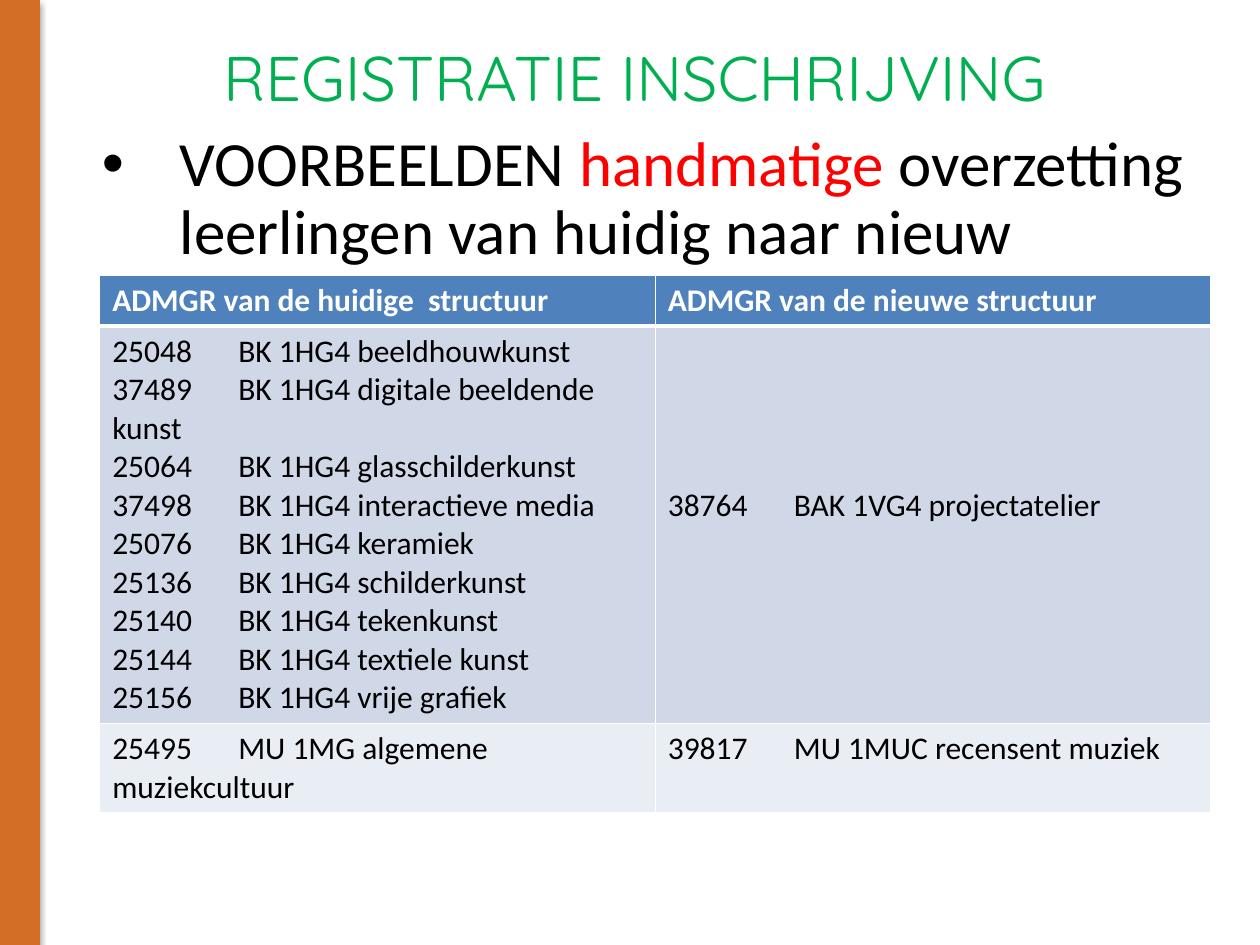
from dataclasses import dataclass

from lxml import etree
from pptx import Presentation
from pptx.dml.color import RGBColor
from pptx.enum.shapes import MSO_SHAPE
from pptx.enum.text import MSO_ANCHOR, MSO_AUTO_SIZE, PP_ALIGN
from pptx.oxml.ns import qn
from pptx.util import Cm, Pt

RECTANGLE = MSO_SHAPE.RECTANGLE
TOP, MIDDLE = MSO_ANCHOR.TOP, MSO_ANCHOR.MIDDLE
NO_FIT = MSO_AUTO_SIZE.NONE
LEFT, CENTER = PP_ALIGN.LEFT, PP_ALIGN.CENTER

ORANGE = RGBColor(0xD2, 0x6E, 0x25)
GREEN = RGBColor(0x00, 0xB0, 0x50)
RED = RGBColor(0xFF, 0x00, 0x00)
BLACK = RGBColor(0x00, 0x00, 0x00)
WHITE = RGBColor(0xFF, 0xFF, 0xFF)
HEADER_BLUE = RGBColor(0x4F, 0x81, 0xBD)
BAND_DARK = RGBColor(0xD0, 0xD8, 0xE8)
BAND_LIGHT = RGBColor(0xE9, 0xED, 0xF4)


@dataclass(frozen=True)
class TableRow:
    height: float
    fill: RGBColor
    current: tuple[str, ...]
    new: tuple[str, ...]
    color: RGBColor = BLACK
    bold: bool = False
    bottom_border: float = 1
    new_margin_top: float = 0.13


ROWS = (
    TableRow(0.97, HEADER_BLUE, ("ADMGR van de huidige  structuur",),
             ("ADMGR van de nieuwe structuur",),
             color=WHITE, bold=True, bottom_border=3),
    TableRow(7.77, BAND_DARK, (
        "25048\tBK 1HG4 beeldhouwkunst",
        "37489\tBK 1HG4 digitale beeldende kunst",
        "25064\tBK 1HG4 glasschilderkunst",
        "37498\tBK 1HG4 interactieve media",
        "25076\tBK 1HG4 keramiek",
        "25136\tBK 1HG4 schilderkunst",
        "25140\tBK 1HG4 tekenkunst",
        "25144\tBK 1HG4 textiele kunst",
        "25156\tBK 1HG4 vrije grafiek",
    ), ("38764\tBAK 1VG4 projectatelier",), new_margin_top=3.23),
    TableRow(1.7, BAND_LIGHT, ("25495\tMU 1MG algemene muziekcultuur",),
             ("39817\tMU 1MUC recensent muziek",)),
)


def add_text(paragraph, text: str, *, size: float, color: RGBColor,
             font: str = "Calibri", bold: bool = False, align=LEFT) -> None:
    paragraph.alignment = align
    run = paragraph.add_run()
    run.text = text
    run.font.name = font
    run.font.size = Pt(size)
    run.font.bold = bold
    run.font.color.rgb = color


def place(shape, left: float, top: float, width: float, height: float) -> None:
    shape.left, shape.top = Cm(left), Cm(top)
    shape.width, shape.height = Cm(width), Cm(height)


def add_solid_color(parent, color: RGBColor):
    solid = etree.SubElement(parent, qn("a:solidFill"))
    return etree.SubElement(solid, qn("a:srgbClr"), val=str(color))


def add_side_bar(slide) -> None:
    bar = slide.shapes.add_shape(RECTANGLE, 0, 0, Cm(0.79), Cm(19.05))
    bar.fill.solid()
    bar.fill.fore_color.rgb = ORANGE
    bar.line.color.rgb = ORANGE
    bar.line.width = Pt(0.75)
    bar.shadow.inherit = False
    effects = bar._element.spPr.find(qn("a:effectLst"))
    shadow = etree.SubElement(effects, qn("a:outerShdw"), blurRad=str(Pt(3.1)),
                              dist=str(Pt(1.8)), dir="5400000", rotWithShape="0")
    color = etree.SubElement(shadow, qn("a:srgbClr"), val=str(BLACK))
    etree.SubElement(color, qn("a:alpha"), val="35000")


def fill_title(title) -> None:
    place(title, 2.49, 0.53, 20.6, 2.01)
    frame = title.text_frame
    frame.auto_size = NO_FIT
    frame.vertical_anchor = MIDDLE
    add_text(frame.paragraphs[0], "REGISTRATIE INSCHRIJVING", size=36,
             color=GREEN, font="Quicksand", align=CENTER)


def fill_body(body) -> None:
    place(body, 1.8, 2.54, 22.61, 13.21)
    frame = body.text_frame
    frame.auto_size = NO_FIT
    frame.vertical_anchor = TOP
    frame.margin_bottom = 0
    paragraph = frame.paragraphs[0]
    properties = paragraph._p.get_or_add_pPr()
    properties.set("marL", str(Cm(1.57)))
    properties.set("indent", str(-Cm(1.57)))
    paragraph.line_spacing = 0.9
    paragraph.space_before = Pt(0)
    for text, color in (
        ("VOORBEELDEN ", BLACK),
        ("handmatige ", RED),
        ("overzetting leerlingen van huidig naar nieuw", BLACK),
    ):
        add_text(paragraph, text, size=36, color=color)


def add_borders(cell, bottom: float, top: float) -> None:
    properties = cell._tc.get_or_add_tcPr()
    for side, width in (("L", 1), ("R", 1), ("T", top), ("B", bottom)):
        line = etree.SubElement(properties, qn(f"a:ln{side}"), w=str(Pt(width)))
        add_solid_color(line, WHITE)


def fill_cell(cell, row: TableRow, lines: tuple[str, ...],
              margin_top: float, top_border: float) -> None:
    add_borders(cell, row.bottom_border, top_border)
    cell.fill.solid()
    cell.fill.fore_color.rgb = row.fill
    cell.margin_top = Cm(margin_top)
    frame = cell.text_frame
    for index, text in enumerate(lines):
        paragraph = frame.add_paragraph() if index else frame.paragraphs[0]
        add_text(paragraph, text, size=18, color=row.color, bold=row.bold)


def add_structure_table(slide) -> None:
    height = sum(row.height for row in ROWS)
    table = slide.shapes.add_table(len(ROWS), 2, Cm(2.01), Cm(5.54),
                                   Cm(22.4), Cm(height)).table
    top_border = 1
    for index, row in enumerate(ROWS):
        table.rows[index].height = Cm(row.height)
        fill_cell(table.cell(index, 0), row, row.current, 0.13, top_border)
        fill_cell(table.cell(index, 1), row, row.new, row.new_margin_top, top_border)
        top_border = row.bottom_border


def main() -> None:
    presentation = Presentation()
    presentation.slide_width, presentation.slide_height = Cm(25.4), Cm(19.05)
    slide = presentation.slides.add_slide(presentation.slide_layouts[1])
    add_side_bar(slide)
    fill_title(slide.shapes.title)
    fill_body(slide.placeholders[1])
    add_structure_table(slide)
    presentation.save("out.pptx")


if __name__ == "__main__":
    main()
